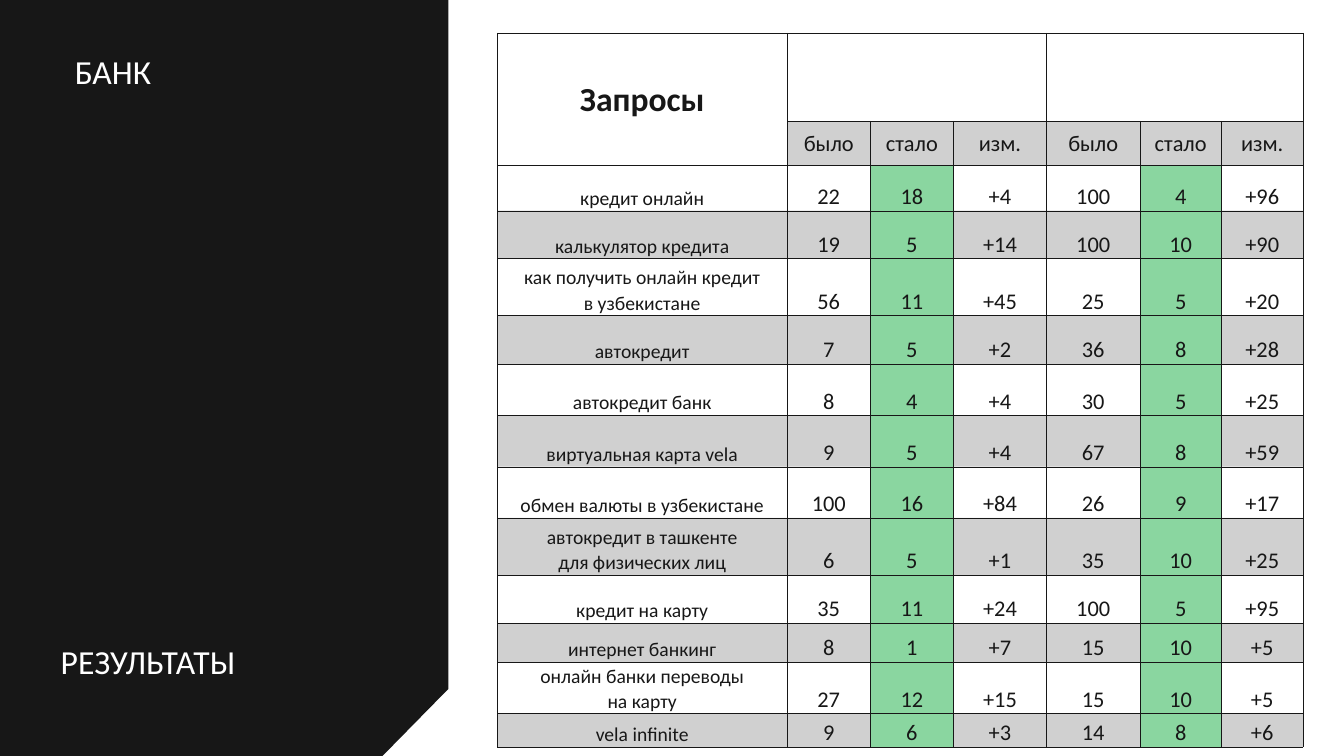
from copy import deepcopy

from lxml import etree
from pptx import Presentation
from pptx.dml.color import RGBColor
from pptx.enum.text import MSO_ANCHOR, PP_ALIGN
from pptx.oxml.ns import qn
from pptx.util import Cm, Pt

TOP, MIDDLE, BOTTOM = MSO_ANCHOR.TOP, MSO_ANCHOR.MIDDLE, MSO_ANCHOR.BOTTOM
LEFT, CENTER = PP_ALIGN.LEFT, PP_ALIGN.CENTER

# Content
TITLE = "БАНК"
LABEL = "РЕЗУЛЬТАТЫ"
CORNER = "Запросы"
HEADS = ["было", "стало", "изм."] * 2
ROWS = [
    ("кредит онлайн", "22", "18", "+4", "100", "4", "+96"),
    ("калькулятор кредита", "19", "5", "+14", "100", "10", "+90"),
    ("""как получить онлайн кредит
в узбекистане""", "56", "11", "+45", "25", "5", "+20"),
    ("автокредит", "7", "5", "+2", "36", "8", "+28"),
    ("автокредит банк", "8", "4", "+4", "30", "5", "+25"),
    ("виртуальная карта vela", "9", "5", "+4", "67", "8", "+59"),
    ("обмен валюты в узбекистане", "100", "16", "+84", "26", "9", "+17"),
    ("""автокредит в ташкенте
для физических лиц""", "6", "5", "+1", "35", "10", "+25"),
    ("кредит на карту", "35", "11", "+24", "100", "5", "+95"),
    ("интернет банкинг", "8", "1", "+7", "15", "10", "+5"),
    ("""онлайн банки переводы
на карту""", "27", "12", "+15", "15", "10", "+5"),
    ("vela infinite", "9", "6", "+3", "14", "8", "+6"),
]

# Look
COLORS = {"dark": "171717", "green": "8AD6A0", "white": "FFFFFF"}
FONT = "Calibri"
WIDTHS = [7.31, 2.09, 2.1, 2.34, 2.36, 2.05, 2.06]
HEIGHTS = [2.22, 1.11, 1.15, 1.2, 1.44, 1.22, 1.29, 1.3, 1.29, 1.44,
           1.21, 0.98, 1.3, 0.84]
PANEL = [(0, 0), (11.3, 0), (11.3, 17.36), (9.64, 19.05), (0, 19.05)]
GREENS = (2, 5)


def rgb(name):
    return RGBColor.from_string(COLORS[name])


def write(frame, text, size, color, align, space, bold=False):
    para = frame.paragraphs[0]
    para.text = text
    para.alignment = align
    para.line_spacing = space
    for run in para.runs:
        font = run.font
        font.name, font.size, font.bold = FONT, Pt(size), bold
        font.color.rgb = rgb(color)
    for gap in para._p.findall(qn("a:br")):
        gap.append(deepcopy(para.runs[0]._r.rPr))
    return para


def place(shape, left, top, width, height, text):
    shape.left, shape.top = Cm(left), Cm(top)
    shape.width, shape.height = Cm(width), Cm(height)
    frame = shape.text_frame
    frame.word_wrap = True
    frame.vertical_anchor = TOP
    write(frame, text, 24, "white", LEFT, 0.9).space_before = Pt(0)


def edge(cell):
    props = cell._tc.get_or_add_tcPr()
    for spot, side in enumerate(("lnL", "lnR", "lnT", "lnB")):
        line = etree.Element(qn("a:" + side), w=str(Pt(0.25)))
        fill = etree.SubElement(line, qn("a:solidFill"))
        etree.SubElement(fill, qn("a:srgbClr"), val=COLORS["dark"])
        props.insert(spot, line)


def paint(cell, color, alpha=100):
    cell.fill.solid()
    cell.fill.fore_color.rgb = rgb(color)
    if alpha < 100:
        # The cell's own fill is a direct child; border fills lie deeper
        tint = cell._tc.tcPr.find(qn("a:solidFill")).find(qn("a:srgbClr"))
        etree.SubElement(tint, qn("a:alpha"), val=str(alpha * 1000))


def fill_cell(cell, text, size, head, bold=False):
    cell.vertical_anchor = MIDDLE if head else BOTTOM
    cell.margin_left = cell.margin_right = Cm(0.18 if head else 0.03)
    cell.margin_top = Cm(0 if head else 0.03)
    cell.margin_bottom = 0
    para = write(cell.text_frame, text, size, "dark", CENTER, 1.07, bold)
    para.space_after = Pt(8)


deck = Presentation()
deck.slide_width, deck.slide_height = Cm(33.87), Cm(19.05)
slide = deck.slides.add_slide(deck.slide_layouts[5])
shapes = slide.shapes

# Dark panel, behind the title
start, *rest = [(Cm(x), Cm(y)) for x, y in PANEL]
pen = shapes.build_freeform(*start)
pen.add_line_segments(rest, close=True)
panel = pen.convert_to_shape()
panel.shadow.inherit = False
panel.fill.solid()
panel.fill.fore_color.rgb = rgb("dark")
panel.line.fill.background()
shapes._spTree.insert(2, panel._element)

# Title and label
place(shapes.title, 1.63, 1.27, 8.46, 3.45, TITLE)
place(shapes.add_textbox(0, 0, 0, 0), 1.28, 16.13, 10.49, 2.49, LABEL)

# Table grid
table = shapes.add_table(len(HEIGHTS), len(WIDTHS), Cm(12.53), Cm(0.83),
                         Cm(sum(WIDTHS)), Cm(sum(HEIGHTS))).table
table.first_row = table.horz_banding = False
for col, width in zip(table.columns, WIDTHS):
    col.width = Cm(width)
for row, height in zip(table.rows, HEIGHTS):
    row.height = Cm(height)
for cell in table.iter_cells():
    cell.fill.background()
    edge(cell)

# Heading rows
table.cell(0, 0).merge(table.cell(1, 0))
for first in (1, 4):
    table.cell(0, first).merge(table.cell(0, first + 2))
fill_cell(table.cell(0, 0), CORNER, 24, True, True)
for c, head in enumerate(HEADS, 1):
    fill_cell(table.cell(1, c), head, 16, True)
    paint(table.cell(1, c), "dark", 20)

# Query rows
for r, values in enumerate(ROWS, 2):
    for c, value in enumerate(values):
        cell = table.cell(r, c)
        fill_cell(cell, value, 16 if c else 14, False)
        if c in GREENS:
            paint(cell, "green")
        elif r % 2:
            paint(cell, "dark", 20)

deck.save("out.pptx")
